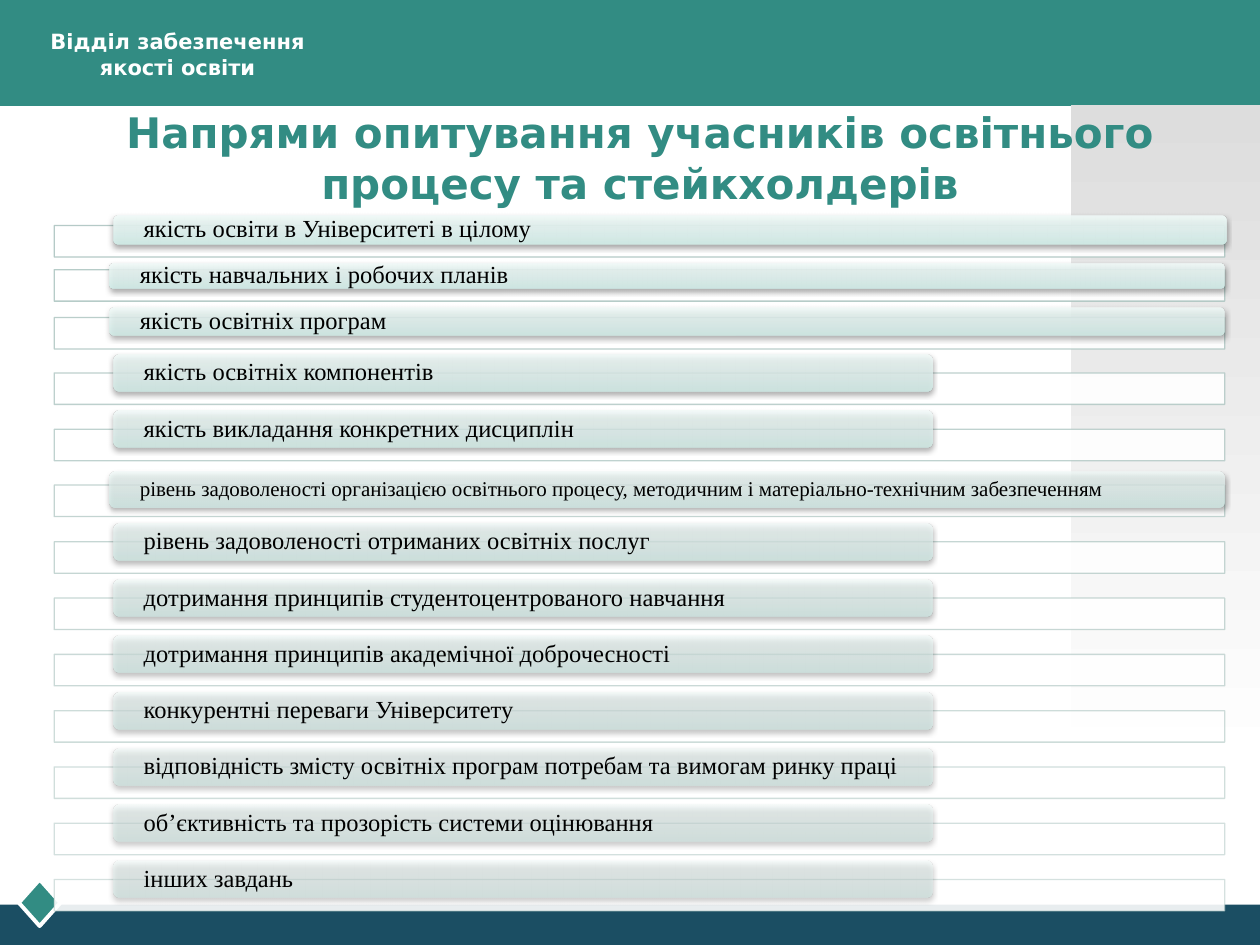
from lxml import etree
from pptx import Presentation
from pptx.dml.color import RGBColor
from pptx.enum import shapes, text
from pptx.oxml import ns
from pptx.util import Inches, Pt

THEME = dict(
    teal="328C83", navy="1B4E63", white="FFFFFF", black="000000",
    frame="ADC5C1",
    fade=[(0, "DDDDDD"), (100, "FFFFFF")],
    pill=[(0, "D2EEE9"), (35, "DEF2EF"), (100, "F2FBF9")],
    head="DejaVu Sans", body="Times New Roman",
    title=24, item=14, small=12,
)
TITLE = "Напрями опитування учасників освітнього процесу та стейкхолдерів"
UNIT = "Відділ забезпечення якості освіти"
ITEMS = [
    "якість освіти в Університеті в цілому",
    "якість навчальних і робочих планів",
    "якість освітніх програм",
    "якість освітніх компонентів",
    "якість викладання конкретних дисциплін",
    "рівень задоволеності організацією освітнього процесу, "
    "методичним і матеріально-технічним забезпеченням",
    "рівень задоволеності отриманих освітніх послуг",
    "дотримання принципів студентоцентрованого навчання",
    "дотримання принципів академічної доброчесності",
    "конкурентні переваги Університету",
    "відповідність змісту освітніх програм потребам та вимогам ринку праці",
    "об’єктивність та прозорість системи оцінювання",
    "інших завдань",
]
# Rows that leave the even grid: frame top, then pill left, top, width, height
WIDE = {
    0: (1.79, (0.9, 1.71, 8.83, 0.23)),
    1: (2.14, (0.87, 2.09, 8.85, 0.2)),
    2: (2.52, (0.87, 2.44, 8.85, 0.22)),
    5: (3.85, (0.87, 3.74, 8.85, 0.29)),
}
FIRST, LAST = 2.96, 6.98  # frame tops of row 3 and of the last row
STEP = (LAST - FIRST) / (len(ITEMS) - 4)
RISE = 0.145  # how far a pill stands above its frame

Shape = shapes.MSO_SHAPE
Align = text.PP_ALIGN


def node(up, tag, **attrs):
    return etree.SubElement(up, ns.qn("a:" + tag),
                            {k: str(v) for k, v in attrs.items()})


def tint(up, color, alpha):
    node(node(up, "srgbClr", val=color), "alpha", val=round(alpha * 1000))


def blend(shape, stops, angle, alpha=100):
    """Fill with a linear gradient; angle is clockwise in degrees."""
    shape.fill.background()
    props = shape._element.spPr
    old = props.find(ns.qn("a:noFill"))
    grad = etree.Element(ns.qn("a:gradFill"), rotWithShape="1")
    props.replace(old, grad)
    held = node(grad, "gsLst")
    for place, color in stops:
        tint(node(held, "gs", pos=place * 1000), color, alpha)
    node(grad, "lin", ang=angle * 60000, scaled=0)


def cast(shape):
    """Put a soft shadow below the shape."""
    effects = shape._element.spPr.find(ns.qn("a:effectLst"))
    drop = node(effects, "outerShdw", blurRad=Pt(3.1), dist=Pt(1.6),
                dir=90 * 60000, rotWithShape=0)
    tint(drop, THEME["black"], 38)


def fade(part, alpha):
    """Make a solid fill or line partly transparent."""
    color = part.find(".//" + ns.qn("a:srgbClr"))
    node(color, "alpha", val=round(alpha * 1000))


def draw(slide, kind, box, fill=None, line=None, width=0.75):
    shape = slide.shapes.add_shape(kind, *map(Inches, box))
    shape.shadow.inherit = False
    if fill:
        shape.fill.solid()
        shape.fill.fore_color.rgb = RGBColor.from_string(fill)
    if line:
        shape.line.color.rgb = RGBColor.from_string(line)
        shape.line.width = Pt(width)
    else:
        shape.line.fill.background()
    return shape


def label(slide, box, words, size, font, color, bold=False, align=Align.LEFT,
          anchor=text.MSO_ANCHOR.TOP, inset=(0.1, 0.05), space=1.0):
    frame = slide.shapes.add_textbox(*map(Inches, box)).text_frame
    frame.word_wrap = True
    frame.vertical_anchor = anchor
    frame.margin_left = frame.margin_right = Inches(inset[0])
    frame.margin_top = frame.margin_bottom = Inches(inset[1])
    para = frame.paragraphs[0]
    para.alignment = align
    para.line_spacing = space
    run = para.add_run()
    run.text = words
    run.font.size, run.font.name, run.font.bold = Pt(size), font, bold
    run.font.color.rgb = RGBColor.from_string(color)


def base(slide):
    t = THEME
    draw(slide, Shape.RECTANGLE, (0, 0, 10, 0.84), t["teal"])
    draw(slide, Shape.RECTANGLE, (0, 7.18, 10, 0.32), t["navy"])
    draw(slide, Shape.DIAMOND, (0.15, 6.98, 0.33, 0.37), t["teal"],
         t["white"], 2.25)
    blend(draw(slide, Shape.RECTANGLE, (8.5, 0.83, 1.5, 5.25)), t["fade"], 90)
    label(slide, (0.58, 0.8, 9, 1.06), TITLE, t["title"], t["head"],
          t["teal"], bold=True, align=Align.CENTER)
    label(slide, (0.12, 0.18, 2.58, 0.66), UNIT, t["small"], t["head"],
          t["white"], bold=True, align=Align.CENTER)


def row(slide, i, words):
    t = THEME
    top = FIRST + (i - 3) * STEP
    top, box = WIDE.get(i, (top, (0.9, top - RISE, 6.5, 0.29)))
    alpha = 90 - 40 * i / (len(ITEMS) - 1)
    frame = draw(slide, Shape.RECTANGLE, (0.43, top, 9.29, 0.25),
                 t["white"], t["frame"])
    props = frame._element.spPr
    fade(props.find(ns.qn("a:solidFill")), 90)
    fade(props.find(ns.qn("a:ln")), alpha)
    pill = draw(slide, Shape.ROUNDED_RECTANGLE, box)
    blend(pill, t["pill"], 270, alpha)
    cast(pill)
    label(slide, box, words, t["small"] if i == 5 else t["item"], t["body"],
          t["black"], align=Align.JUSTIFY if i in WIDE else Align.LEFT,
          anchor=text.MSO_ANCHOR.MIDDLE, inset=(0.24, 0), space=0.9)


def main():
    deck = Presentation()
    deck.slide_width, deck.slide_height = Inches(10), Inches(7.5)
    slide = deck.slides.add_slide(deck.slide_layouts[6])
    base(slide)
    for i, words in enumerate(ITEMS):
        row(slide, i, words)
    deck.save("out.pptx")


if __name__ == "__main__":
    main()
